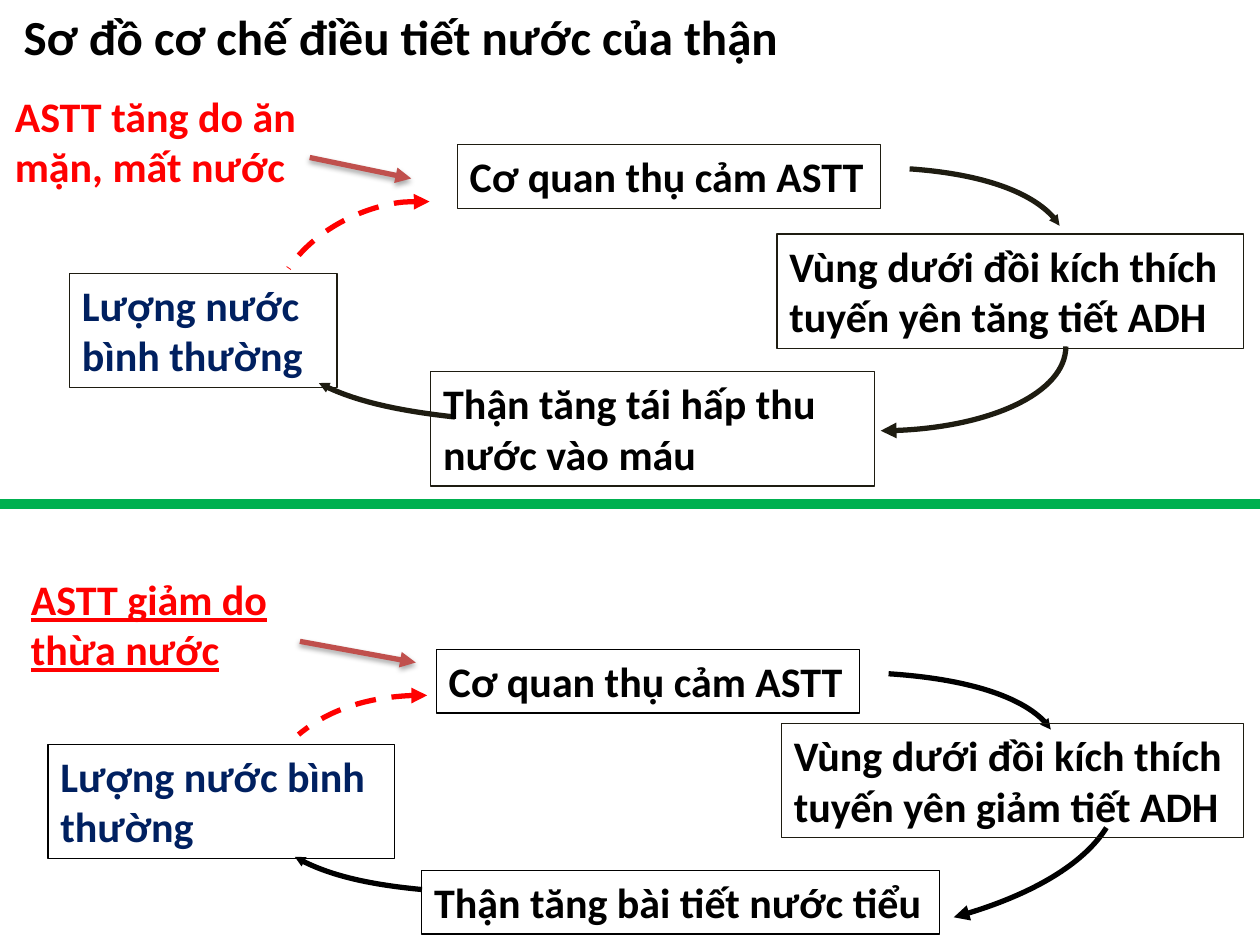
from dataclasses import dataclass
from lxml.etree import SubElement
from pptx import Presentation
from pptx.dml.color import RGBColor as Rgb
from pptx.enum.dml import MSO_LINE_DASH_STYLE as Dash
from pptx.enum.shapes import MSO_CONNECTOR as Link, MSO_SHAPE as Form
from pptx.enum.text import MSO_ANCHOR as Anchor, MSO_AUTO_SIZE as Fit, PP_ALIGN as Align
from pptx.oxml.ns import qn
from pptx.util import Pt


@dataclass(frozen=True)
class Theme:
    font: str = "Calibri"
    title_size: int = 28
    body_size: int = 24
    black: str = "000000"
    dark: str = "1E1C11"
    navy: str = "002060"
    red: str = "FF0000"
    brick: str = "C0504D"
    green: str = "00B050"
    border: float = 0.75
    stroke: int = 3
    divider: int = 6


THEME = Theme()
ONE_LINE, TWO_LINES = 36.35, 65.43

UPPER = {
    "ink": THEME.dark,
    "cause": ("ASTT tăng do ăn mặn, mất nước", 1.4, 48.2, 207.4, False),
    "trigger": ((177, 90), (235, 102)),
    "boxes": [
        ("Lượng nước bình thường", 39.8, 156.2, 152.8, TWO_LINES, THEME.navy, True, THEME.dark),
        ("Cơ quan thụ cảm ASTT", 261.3, 82.7, 242, ONE_LINE, THEME.black, False, THEME.dark),
        ("Vùng dưới đồi kích thích\ntuyến yên tăng tiết ADH",
         444, 133.8, 266.5, TWO_LINES, THEME.black, False, THEME.dark),
        ("Thận tăng tái hấp thu nước vào máu",
         246.2, 212.3, 253.6, TWO_LINES, THEME.black, True, THEME.dark),
    ],
    "flow": [
        ([(519.8, 96.5), (562.5, 99.5), (596, 112.5), (605.5, 129)], (503.3, 138.2), "sm"),
        ([(609.1, 198), (609.1, 224.5), (561.6, 246.2), (503.3, 246.2)], (503.3, 198), "med"),
        ([(259.9, 238.3), (226.8, 234.7), (199.4, 228.2), (182.2, 218.9)], (300.2, 198), "sm"),
    ],
    "feedback": ([(164.9, 153.4), (177.1, 135.4), (198.7, 121.7), (223.2, 116.6),
                  (230.4, 115.2), (238.3, 115.2), (245.5, 115.2)], (234.7, 175.7), "med"),
}

LOWER = {
    "ink": THEME.black,
    "cause": ("ASTT giảm do thừa nước", 10.6, 324.2, 159, True),
    "trigger": ((171.4, 366.5), (237.6, 378.6)),
    "boxes": [
        ("Cơ quan thụ cảm ASTT", 249.3, 371.2, 242, ONE_LINE, THEME.black, False, THEME.black),
        ("Thận tăng bài tiết nước tiểu", 241, 497.4, 296, ONE_LINE, THEME.black, False, THEME.black),
        ("Lượng nước bình thường", 27.4, 425.3, 198, TWO_LINES, THEME.navy, True, THEME.black),
        ("Vùng dưới đồi kích thích\ntuyến yên giảm tiết ADH",
         446.5, 413.4, 264, TWO_LINES, THEME.black, False, THEME.dark),
    ],
    "flow": [
        ([(507.8, 385), (553.7, 388), (590.4, 400.5), (600.5, 416.9)], (489.6, 426.2), "sm"),
        ([(632.2, 473), (619.2, 493.9), (585.4, 513.4), (545, 524.2)], (532.8, 478.1), "med"),
        ([(241.2, 508.3), (210.2, 505.4), (184.3, 499), (168.5, 489.6)], (279.4, 468.7), "sm"),
    ],
    "feedback": ([(170.6, 419.8), (187.9, 405.4), (215.3, 396.7), (244.1, 397.4)],
                 (241.9, 457.9), "med"),
}


def apply(target, formats):
    for name, value in formats.items():
        setattr(target, name, value)


def write(box, text, color, size=THEME.body_size, wrap=True, underline=None):
    frame = box.text_frame
    frame.text = text
    apply(frame, {"word_wrap": wrap, "auto_size": Fit.NONE, "vertical_anchor": Anchor.TOP})
    for para in frame.paragraphs:
        para.alignment = Align.LEFT
        for span in para.runs:
            apply(span.font, {"name": THEME.font, "size": Pt(size),
                              "bold": True, "underline": underline})
            span.font.color.rgb = Rgb.from_string(color)


def set_line(shape, color, width):
    shape.line.color.rgb = Rgb.from_string(color)
    shape.line.width = Pt(width)


def add_arrowhead(shape, end, size="med"):
    line = shape.element.spPr.find(qn("a:ln"))
    SubElement(line, qn(f"a:{end}"), type="triangle", w=size, len=size)


def add_title(page, text):
    title = page.shapes.title
    apply(title, {"left": Pt(0), "top": Pt(0), "width": Pt(708), "height": Pt(41)})
    write(title, text, THEME.black, THEME.title_size)
    title.text_frame.margin_left = Pt(13.5)


def add_cause(page, text, left, top, width, underline):
    box = page.shapes.add_textbox(Pt(left), Pt(top), Pt(width), Pt(TWO_LINES))
    write(box, text, THEME.red, underline=underline)


def add_box(page, text, left, top, width, height, color, wrap, ink):
    box = page.shapes.add_shape(Form.RECTANGLE, Pt(left), Pt(top), Pt(width), Pt(height))
    box.shadow.inherit = False
    box.fill.background()
    set_line(box, ink, THEME.border)
    write(box, text, color, wrap=wrap)


def add_straight(page, start, end, color, width):
    line = page.shapes.add_connector(Link.STRAIGHT, *map(Pt, start + end))
    set_line(line, color, width)
    return line, SubElement(line.element.spPr, qn("a:effectLst"))


def add_trigger(page, start, end):
    arrow, effects = add_straight(page, start, end, THEME.brick, THEME.stroke)
    add_arrowhead(arrow, "tailEnd")
    shadow = SubElement(effects, qn("a:outerShdw"), blurRad=str(Pt(3.1)),
                        dist=str(Pt(1.8)), dir="5400000", rotWithShape="0")
    shade = SubElement(shadow, qn("a:srgbClr"), val=THEME.black)
    SubElement(shade, qn("a:alpha"), val="35000")


def bend(curve, points):
    outline = next(curve.element.iter(qn("a:path")))
    for step in list(outline):
        outline.remove(step)

    def add_step(kind, stops):
        step = SubElement(outline, qn(f"a:{kind}"))
        for x, y in stops:
            SubElement(step, qn("a:pt"), x=str(Pt(x) - curve.left), y=str(Pt(y) - curve.top))

    add_step("moveTo", points[:1])
    for first in range(1, len(points), 3):
        add_step("cubicBezTo", points[first:first + 3])


def add_curve(page, color, controls, corner, head, dash=None):
    backward = controls[::-1]
    builder = page.shapes.build_freeform(*map(Pt, backward[0]))
    frame = [tuple(map(Pt, point)) for point in (backward[-1], corner)]
    builder.add_line_segments(frame, close=False)
    curve = builder.convert_to_shape()
    bend(curve, backward)
    curve.shadow.inherit = False
    curve.fill.background()
    set_line(curve, color, THEME.stroke)
    if dash:
        curve.line.dash_style = dash
    add_arrowhead(curve, "headEnd", head)


def add_cycle(page, cycle):
    add_cause(page, *cycle["cause"])
    add_trigger(page, *cycle["trigger"])
    for arc in cycle["flow"]:
        add_curve(page, cycle["ink"], *arc)
    add_curve(page, THEME.red, *cycle["feedback"], Dash.DASH)
    for box in cycle["boxes"]:
        add_box(page, *box)


def main():
    deck = Presentation()
    apply(deck, {"slide_width": Pt(720), "slide_height": Pt(540)})
    page = deck.slides.add_slide(deck.slide_layouts[5])
    add_title(page, "Sơ đồ cơ chế điều tiết nước của thận")
    for cycle in (UPPER, LOWER):
        add_cycle(page, cycle)
    add_straight(page, (0, 288), (720, 288), THEME.green, THEME.divider)
    deck.save("out.pptx")


if __name__ == "__main__":
    main()
